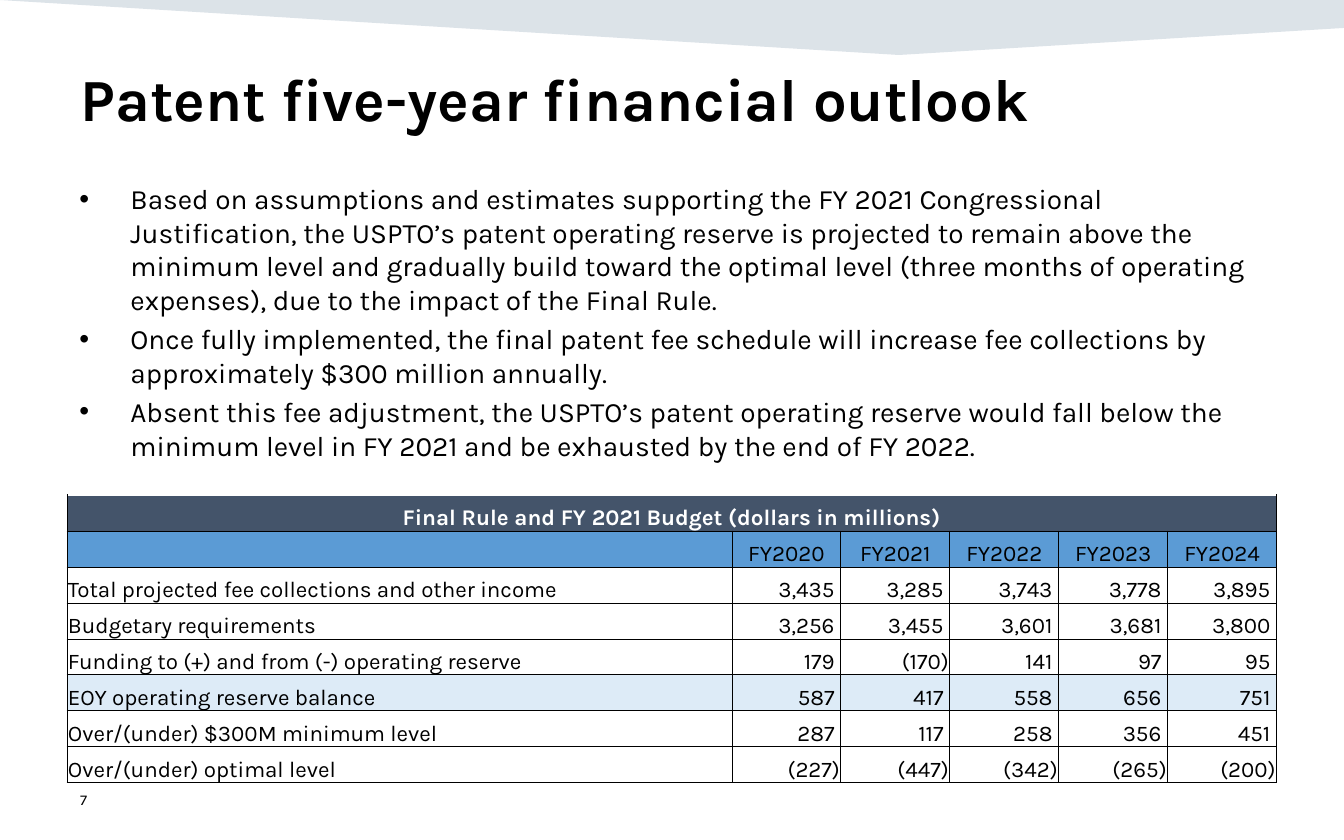
import pptx
import pptx.util
import pptx.dml.color
import pptx.enum.text
import pptx.oxml
import pptx.oxml.ns
import lxml.etree

RGB = pptx.dml.color.RGBColor
ALIGN = pptx.enum.text.PP_ALIGN
ANCHOR = pptx.enum.text.MSO_ANCHOR
BLACK = RGB(0x00, 0x00, 0x00)
WHITE = RGB(0xFF, 0xFF, 0xFF)
NAVY = RGB(0x16, 0x44, 0x69)
SLATE = RGB(0x44, 0x54, 0x6A)
BLUE = RGB(0x5B, 0x9B, 0xD5)
PALE = RGB(0xDD, 0xEB, 0xF7)
SCALE = 914400 / 134.4


def px(n):
    return pptx.util.Emu(round(n * SCALE))


def style(frame, size, color=BLACK, bold=False, align=ALIGN.LEFT):
    for para in frame.paragraphs:
        para.alignment = align
        for run in para.runs:
            font = run.font
            font.name = "Karla"
            font.size = pptx.util.Pt(size)
            font.bold = bold
            font.color.rgb = color


deck = pptx.Presentation()
deck.slide_width, deck.slide_height = px(1344), px(840)
slide = deck.slides.add_slide(deck.slide_layouts[1])
shapes = slide.shapes

# Pale band along the top edge, behind everything
pen = shapes.build_freeform(0, 0, scale=SCALE)
pen.add_line_segments([(1344, 0), (1344, 28), (899, 55)], close=True)
band = pen.convert_to_shape()
band.shadow.inherit = False
band.fill.solid()
band.fill.fore_color.rgb = NAVY
band.line.fill.background()
tint = band._element.spPr.find(".//" + pptx.oxml.ns.qn("a:srgbClr"))
lxml.etree.SubElement(tint, pptx.oxml.ns.qn("a:alpha"), val="15000")
shapes._spTree.insert(2, band._element)

# Title and bullet list
title, body = shapes.title, slide.placeholders[1]
for box, left, top, high in ((title, 67, 55, 131), (body, 66, 175, 492)):
    box.left, box.top, box.width, box.height = px(left), px(top), px(1210), px(high)
    box.text_frame.auto_size = pptx.enum.text.MSO_AUTO_SIZE.NONE
    box.text_frame.vertical_anchor = ANCHOR.TOP

title.text_frame.text = "Patent five-year financial outlook"
style(title.text_frame, 32, bold=True)

points = [
    "Based on assumptions and estimates supporting the FY 2021 Congressional "
    "Justification, the USPTO’s patent operating reserve is projected to remain "
    "above the minimum level and gradually build toward the optimal level (three "
    "months of operating expenses), due to the impact of the Final Rule.",
    "Once fully implemented, the final patent fee schedule will increase fee "
    "collections by approximately $300 million annually.",
    "Absent this fee adjustment, the USPTO’s patent operating reserve would fall "
    "below the minimum level in FY 2021 and be exhausted by the end of FY 2022.",
]
body.text_frame.text = "\n".join(points)
style(body.text_frame, 15)
for para in body.text_frame.paragraphs:
    para.space_before = pptx.util.Pt(3)
    props = para._p.get_or_add_pPr()
    props.set("marL", str(px(51)))
    props.set("indent", str(-px(51)))

# Budget table
rows = [
    ["Final Rule and FY 2021 Budget (dollars in millions)"] + [""] * 5,
    [""] + [f"FY{year}" for year in range(2020, 2025)],
    ["Total projected fee collections and other income", 3435, 3285, 3743, 3778, 3895],
    ["Budgetary requirements", 3256, 3455, 3601, 3681, 3800],
    ["Funding to (+) and from (-) operating reserve", 179, -170, 141, 97, 95],
    ["EOY operating reserve balance", 587, 417, 558, 656, 751],
    ["Over/(under) $300M minimum level", 287, 117, 258, 356, 451],
    ["Over/(under) optimal level", -227, -447, -342, -265, -200],
]
fills = {0: SLATE, 1: BLUE, 5: PALE}
grid = shapes.add_table(8, 6, px(67), px(495), px(1210), px(288)).table
for c, col in enumerate(grid.columns):
    col.width = px(109 if c else 665)
for row in grid.rows:
    row.height = px(36)
grid.cell(0, 0).merge(grid.cell(0, 5))

for r, row in enumerate(rows):
    for c, value in enumerate(row):
        cell = grid.cell(r, c)
        cell.margin_left = cell.margin_right = cell.margin_top = px(1)
        cell.margin_bottom = 0
        cell.vertical_anchor = ANCHOR.BOTTOM

        # Thin black borders, with no line above the header
        for side in "LRTB" if r else "LRB":
            line = pptx.oxml.parse_xml(
                f'<a:ln{side} {pptx.oxml.ns.nsdecls("a")} w="6350"><a:solidFill>'
                f'<a:srgbClr val="{BLACK}"/></a:solidFill></a:ln{side}>')
            cell._tc.get_or_add_tcPr().append(line)
        if r in fills:
            cell.fill.solid()
            cell.fill.fore_color.rgb = fills[r]
        else:
            cell.fill.background()

        # Positive figures leave room for the closing bracket
        if isinstance(value, int):
            value = f"({-value:,})" if value < 0 else f"{value:,} "
        frame = cell.text_frame
        if value:
            frame.text = value
        else:
            frame.paragraphs[0]._p.get_or_add_endParaRPr().set("sz", "1200")
        align = ALIGN.CENTER if r < 2 else ALIGN.RIGHT if c else ALIGN.LEFT
        style(frame, 12, BLACK if r else WHITE, r == 0, align)

# Page number
page = shapes.add_textbox(px(67), px(778), px(302), px(44))
page.text_frame.word_wrap = True
page.text_frame.vertical_anchor = ANCHOR.MIDDLE
page.text_frame.text = "7"
style(page.text_frame, 8)

deck.save("out.pptx")
